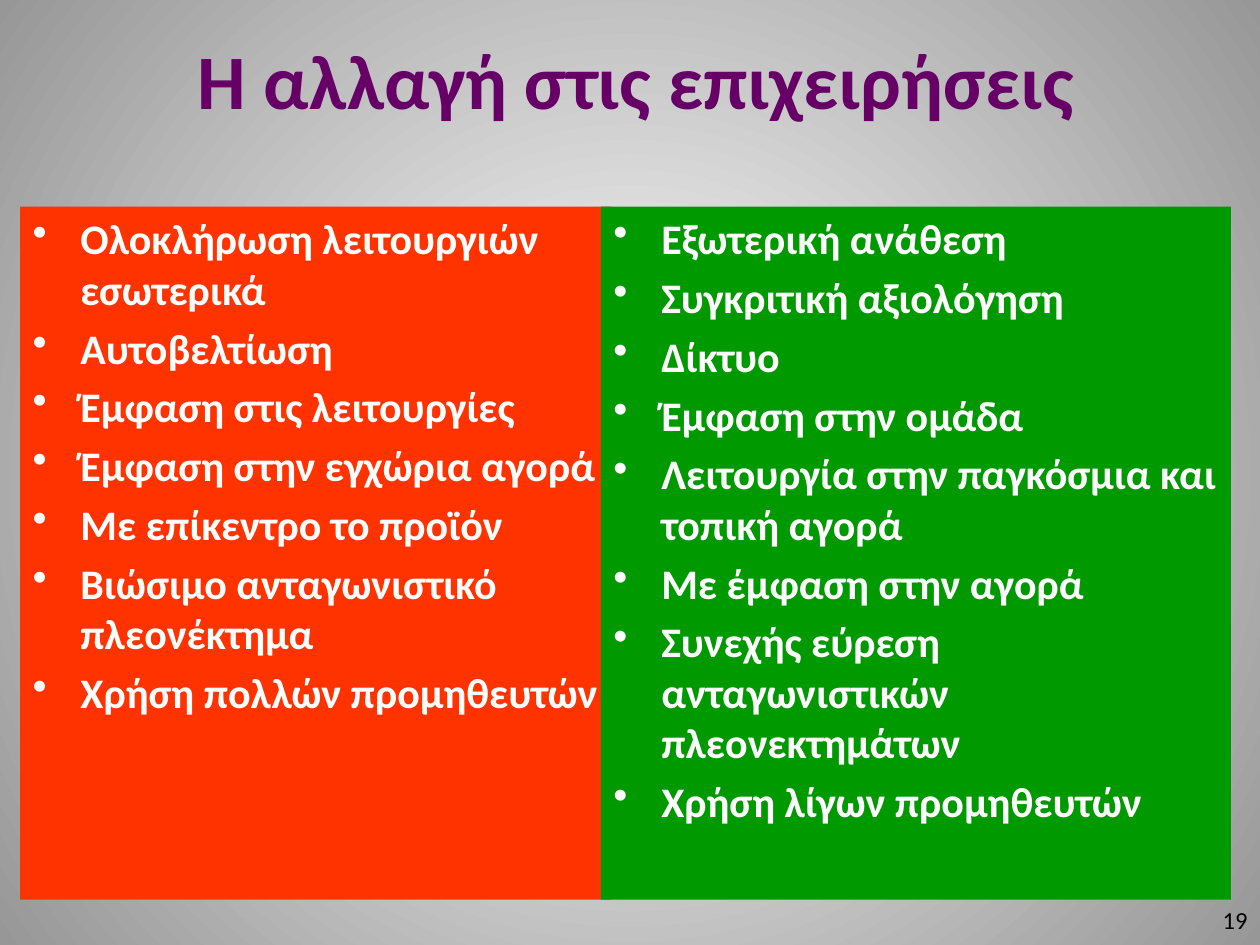
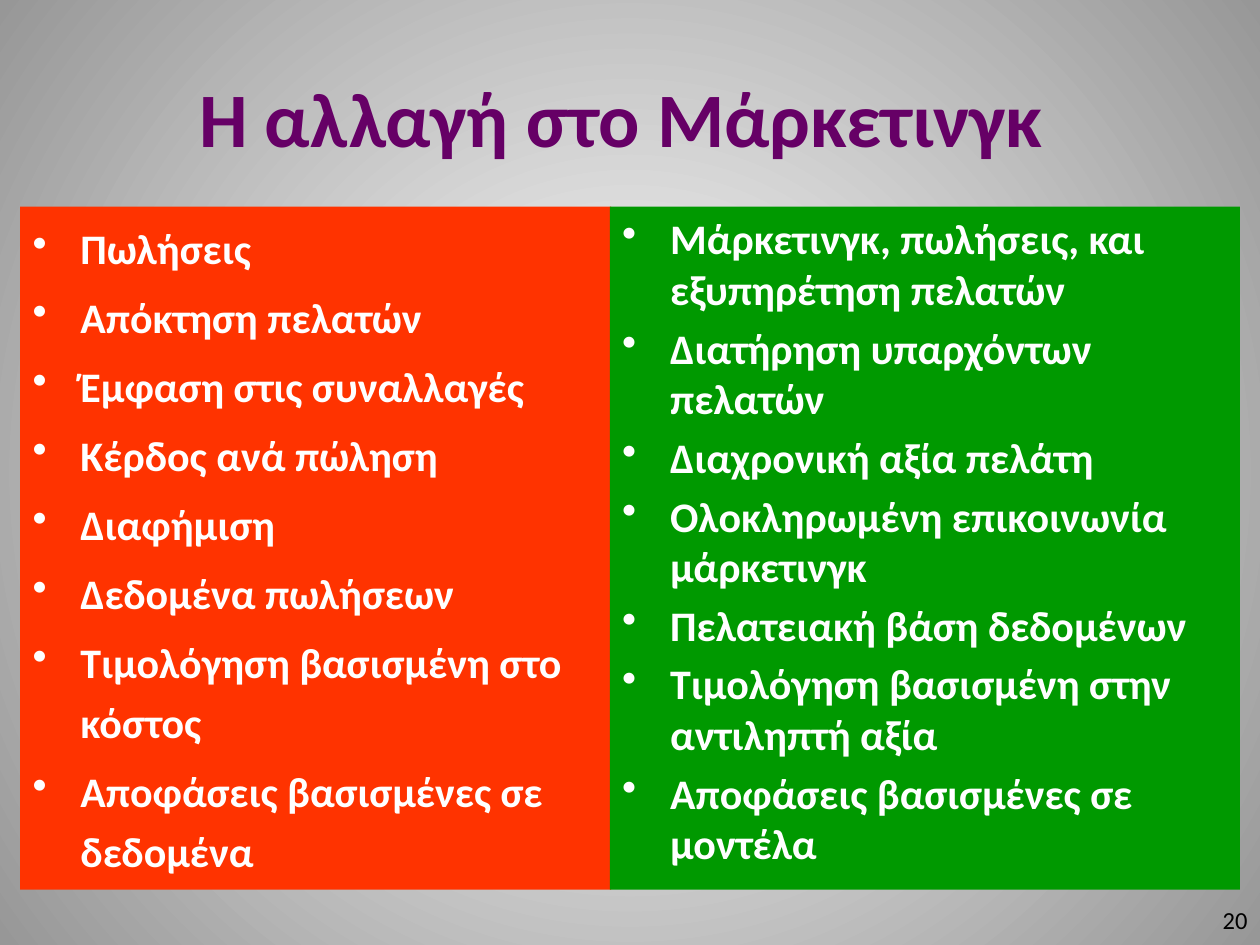
from lxml import etree
from pptx import Presentation
from pptx.dml.color import RGBColor
from pptx.enum.shapes import MSO_SHAPE
from pptx.enum.text import MSO_ANCHOR, PP_ALIGN
from pptx.oxml.ns import qn
from pptx.util import Inches, Pt

RECT = MSO_SHAPE.RECTANGLE
TOP, MIDDLE = MSO_ANCHOR.TOP, MSO_ANCHOR.MIDDLE
LEFT, CENTER, RIGHT = PP_ALIGN.LEFT, PP_ALIGN.CENTER, PP_ALIGN.RIGHT

FONT = "Calibri"
PURPLE, RED, GREEN = "660066", "FF3300", "009900"
WHITE, GREY, BLACK = "FFFFFF", "979797", "000000"
TITLE_ONLY = 5
INDENT = Inches(0.38)
PANEL_TOP = 1.64
NUMBER_BOX = (7.67, 7.1, 2.33, 0.4)

SLIDES = [
    {
        "number": 19,
        "title": "Η αλλαγή στις επιχειρήσεις",
        "title_box": (0.55, 0, 9, 1.25),
        "panel_height": 5.5,
        "new_left": 4.77,
        "old_line_spacing": 1.0,
        "old": [
            "Ολοκλήρωση λειτουργιών εσωτερικά",
            "Αυτοβελτίωση",
            "Έμφαση στις λειτουργίες",
            "Έμφαση στην εγχώρια αγορά",
            "Με επίκεντρο το προϊόν",
            "Βιώσιμο ανταγωνιστικό πλεονέκτημα",
            "Χρήση πολλών προμηθευτών",
        ],
        "new": [
            "Εξωτερική ανάθεση",
            "Συγκριτική αξιολόγηση",
            "Δίκτυο",
            "Έμφαση στην ομάδα",
            "Λειτουργία στην παγκόσμια και τοπική αγορά",
            "Με έμφαση στην αγορά",
            "Συνεχής εύρεση ανταγωνιστικών πλεονεκτημάτων",
            "Χρήση λίγων προμηθευτών",
        ],
    },
    {
        "number": 20,
        "title": "Η αλλαγή στο Μάρκετινγκ ",
        "title_box": (0.5, 0.3, 9, 1.25),
        "panel_height": 5.42,
        "new_left": 4.84,
        "old_line_spacing": 1.2,
        "old": [
            "Πωλήσεις",
            "Απόκτηση πελατών",
            "Έμφαση στις συναλλαγές",
            "Κέρδος ανά πώληση",
            "Διαφήμιση",
            "Δεδομένα πωλήσεων",
            "Τιμολόγηση βασισμένη στο κόστος",
            "Αποφάσεις βασισμένες σε δεδομένα",
        ],
        "new": [
            "Μάρκετινγκ, πωλήσεις, και εξυπηρέτηση πελατών",
            "Διατήρηση υπαρχόντων πελατών",
            "Διαχρονική αξία πελάτη",
            "Ολοκληρωμένη επικοινωνία μάρκετινγκ",
            "Πελατειακή βάση δεδομένων",
            "Τιμολόγηση βασισμένη στην αντιληπτή αξία",
            "Αποφάσεις βασισμένες σε μοντέλα",
        ],
    },
]


def rgb(value):
    """Turn a hex string into a colour."""
    return RGBColor.from_string(value)


def inches(box):
    """Convert a box of numbers to lengths."""
    return [Inches(v) for v in box]


def style(p, size, color, align, bold=False):
    """Set the font and alignment of a paragraph."""
    p.alignment = align
    p.font.name, p.font.size, p.font.bold = FONT, Pt(size), bold
    p.font.color.rgb = rgb(color)


def add_bullet(p):
    """Give a paragraph a hanging round bullet."""
    pPr = p._p.get_or_add_pPr()
    pPr.set("marL", str(INDENT))
    pPr.set("indent", str(-INDENT))
    bullet = etree.Element(qn("a:buChar"), char="•")
    pPr.find(qn("a:defRPr")).addprevious(bullet)


def set_background(master):
    """Give the master a gradient that darkens from the centre outwards."""
    fill = master.background.fill
    fill.gradient()
    for stop, color in zip(fill.gradient_stops, (WHITE, GREY)):
        stop.color.rgb = rgb(color)
    grad = master.element.find(".//" + qn("a:gradFill"))
    grad.remove(grad.find(qn("a:lin")))
    circle = etree.SubElement(grad, qn("a:path"), path="circle")
    etree.SubElement(circle, qn("a:fillToRect"), dict.fromkeys("ltrb", "50000"))


def set_title(s, box, text):
    """Place and format the title placeholder."""
    sp = s.shapes.title
    sp.left, sp.top, sp.width, sp.height = inches(box)
    tf = sp.text_frame
    tf.text = text
    tf.vertical_anchor = MIDDLE
    style(tf.paragraphs[0], 44, PURPLE, CENTER, bold=True)


def add_panel(s, box, color, items, line_spacing=1.0):
    """Add a coloured panel with a bulleted list."""
    sp = s.shapes.add_shape(RECT, *inches(box))
    sp.shadow.inherit = False
    sp.fill.solid()
    sp.fill.fore_color.rgb = rgb(color)
    sp.line.fill.background()
    tf = sp.text_frame
    tf.word_wrap = True
    tf.vertical_anchor = TOP
    tf.text = "\n".join(items)
    for p in tf.paragraphs:
        style(p, 24, WHITE, LEFT, bold=True)
        p.space_before = Pt(4.8)
        p.line_spacing = line_spacing
        add_bullet(p)


def add_number(s, box, number):
    """Add the slide number."""
    tf = s.shapes.add_textbox(*inches(box)).text_frame
    tf.word_wrap = True
    tf.vertical_anchor = MIDDLE
    tf.text = str(number)
    style(tf.paragraphs[0], 14, BLACK, RIGHT)


def add_comparison(prs, data):
    """Add a slide that sets the old practice beside the new one."""
    s = prs.slides.add_slide(prs.slide_layouts[TITLE_ONLY])
    height = data["panel_height"]
    set_title(s, data["title_box"], data["title"])
    add_panel(s, (0.16, PANEL_TOP, 4.69, height), RED, data["old"],
              data["old_line_spacing"])
    add_panel(s, (data["new_left"], PANEL_TOP, 5, height), GREEN, data["new"])
    add_number(s, NUMBER_BOX, data["number"])


def main():
    """Build and save the presentation."""
    prs = Presentation()
    prs.slide_width, prs.slide_height = Inches(10), Inches(7.5)
    set_background(prs.slide_master)
    for data in SLIDES:
        add_comparison(prs, data)
    prs.save("out.pptx")


if __name__ == "__main__":
    main()
